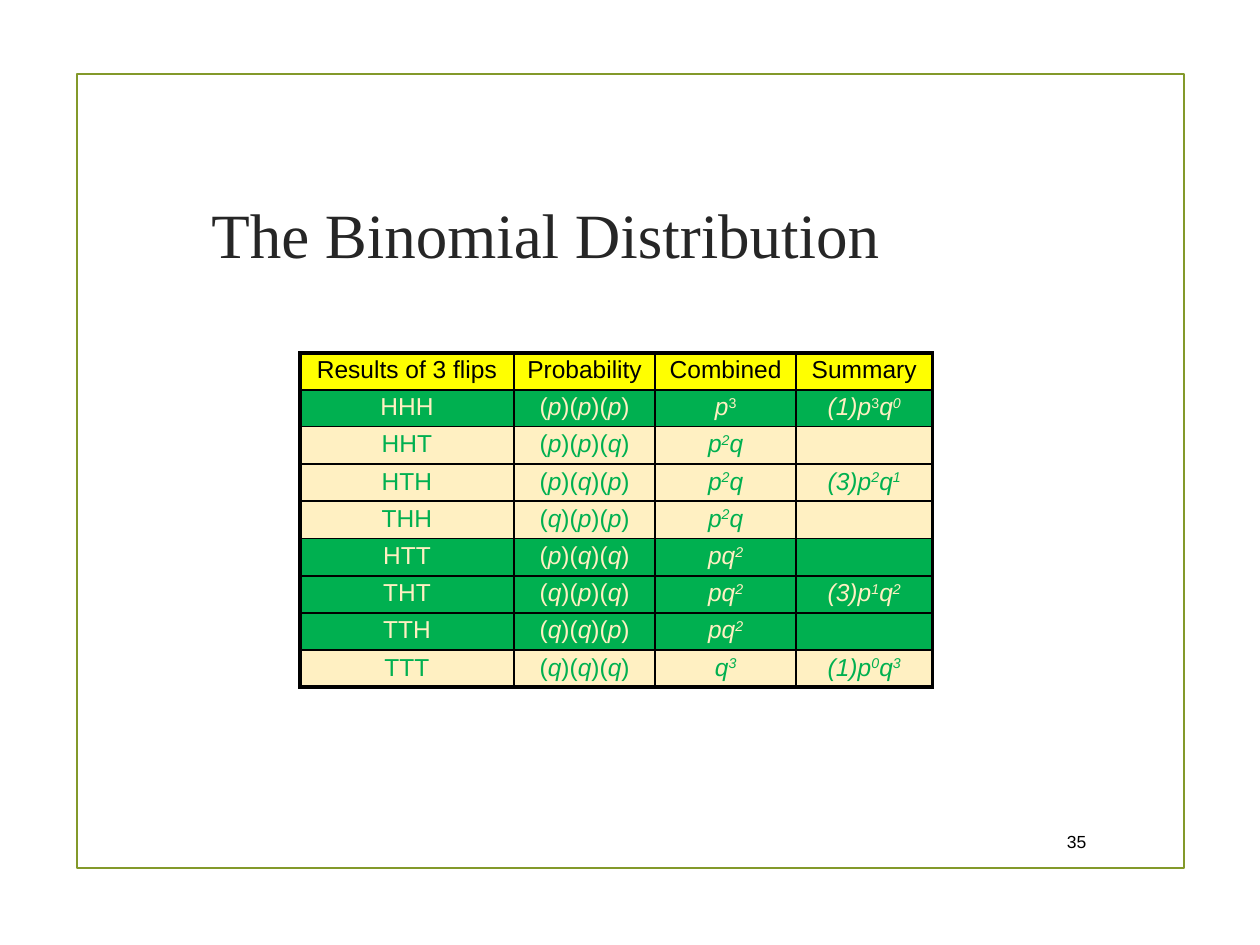
from lxml import etree
from pptx import Presentation, util as u
from pptx.dml.color import RGBColor
from pptx.enum import shapes, text
from pptx.oxml.ns import qn

COLORS = {"frame": "83992A", "title": "262626", "black": "000000",
          "header": "FFFF00", "green": "00B050", "cream": "FFF0C2"}
HEADERS = ["Results of 3 flips", "Probability", "Combined", "Summary"]
OUTCOMES = [
    ("HHH", "p^3", "(1)p^3^q^0", "green"),
    ("HHT", "p^2^q", "", "cream"),
    ("HTH", "p^2^q", "(3)p^2^q^1", "cream"),
    ("THH", "p^2^q", "", "cream"),
    ("HTT", "pq^2", "", "green"),
    ("THT", "pq^2", "(3)p^1^q^2", "green"),
    ("TTH", "pq^2", "", "green"),
    ("TTT", "q^3", "(1)p^0^q^3", "cream"),
]
LABELS = [
    ("The Binomial Distribution", (0.83, 1.5, 7, 0.7), text.PP_ALIGN.CENTER,
     {"name": "Times New Roman", "size": u.Pt(36)}, "title"),
    ("35", (8.29, 6.52, 0.43, 0.31), text.PP_ALIGN.RIGHT,
     {"name": "Arial", "size": u.Pt(10)}, "black"),
]
CELL_FONT = {"name": "Arial", "size": u.Pt(14)}
CELL_FORMAT = {"margin_left": u.Inches(0.06), "margin_right": u.Inches(0.06),
               "margin_top": u.Inches(0.03), "margin_bottom": u.Inches(0.03)}
COL_WIDTHS = [1.7, 1.12, 1.12, 1.08]
TABLE_LEFT, TABLE_TOP, TABLE_HEIGHT = 2.38, 2.8, 2.64
THIN, THICK = 1, 2.25


def rgb(name):
    return RGBColor.from_string(COLORS[name])


def set_all(obj, values):
    for key, value in values.items():
        setattr(obj, key, value)


def add_run(p, content, font, color, italic=False, raised=False):
    r = p.add_run()
    r.text = content
    set_all(r.font, font)
    r.font.italic = italic
    r.font.color.rgb = rgb(color)
    if raised:
        r._r.get_or_add_rPr().set("baseline", "30000")


def add_border(cell, side, width):
    ln = etree.SubElement(cell._tc.get_or_add_tcPr(), qn(f"a:ln{side}"), w=str(u.Pt(width)))
    fill = etree.SubElement(ln, qn("a:solidFill"))
    etree.SubElement(fill, qn("a:srgbClr"), val=COLORS["black"])


def probability_runs(flips):
    runs = [("(", False, False)]
    for i, flip in enumerate(flips):
        runs.append(("p" if flip == "H" else "q", True, False))
        runs.append((")(" if i < len(flips) - 1 else ")", False, False))
    return runs


def power_runs(formula, upright=""):
    return [(part, part != upright, i % 2 == 1)
            for i, part in enumerate(formula.split("^")) if part]


def build_rows():
    rows = [("header", "black", [[(h, False, False)] for h in HEADERS])]
    for flips, combined, summary, fill in OUTCOMES:
        upright = "3" if flips == "HHH" else ""
        ink = "cream" if fill == "green" else "green"
        rows.append((fill, ink, [[(flips, False, False)], probability_runs(flips),
                                 power_runs(combined, upright), power_runs(summary, upright)]))
    return rows


def add_results_table(s):
    rows = build_rows()
    last_row, last_col = len(rows) - 1, len(COL_WIDTHS) - 1
    frame = s.shapes.add_table(len(rows), len(COL_WIDTHS), u.Inches(TABLE_LEFT), u.Inches(TABLE_TOP),
                               u.Inches(sum(COL_WIDTHS)), u.Inches(TABLE_HEIGHT))
    table = frame.table
    for col, width in zip(table.columns, COL_WIDTHS):
        col.width = u.Inches(width)
    for i, (fill, ink, cells) in enumerate(rows):
        table.rows[i].height = u.Inches(TABLE_HEIGHT / len(rows))
        for j, runs in enumerate(cells):
            cell = table.cell(i, j)
            set_all(cell, CELL_FORMAT)
            edges = {"L": j == 0, "R": j == last_col, "T": i == 0, "B": i == last_row}
            for side, outer in edges.items():
                add_border(cell, side, THICK if outer else THIN)
            cell.fill.solid()
            cell.fill.fore_color.rgb = rgb(fill)
            p = cell.text_frame.paragraphs[0]
            p.alignment = text.PP_ALIGN.CENTER
            for content, italic, raised in runs:
                add_run(p, content, CELL_FONT, ink, italic, raised)
            if not runs:
                etree.SubElement(p._p, qn("a:endParaRPr"), sz="1400")


def add_label(s, content, box, align, font, color):
    tf = s.shapes.add_textbox(*map(u.Inches, box)).text_frame
    set_all(tf, {"word_wrap": True, "vertical_anchor": text.MSO_ANCHOR.MIDDLE})
    p = tf.paragraphs[0]
    p.alignment = align
    add_run(p, content, font, color)


def main():
    prs = Presentation()
    set_all(prs, {"slide_width": u.Inches(10), "slide_height": u.Inches(7.5)})
    s = prs.slides.add_slide(prs.slide_layouts[6])
    sp = s.shapes.add_shape(shapes.MSO_SHAPE.RECTANGLE, *map(u.Inches, (0.61, 0.59, 8.79, 6.3)))
    sp.shadow.inherit = False
    sp.fill.background()
    sp.line.color.rgb = rgb("frame")
    sp.line.width = u.Pt(1.25)
    add_results_table(s)
    for label in LABELS:
        add_label(s, *label)
    prs.save("out.pptx")


if __name__ == "__main__":
    main()
